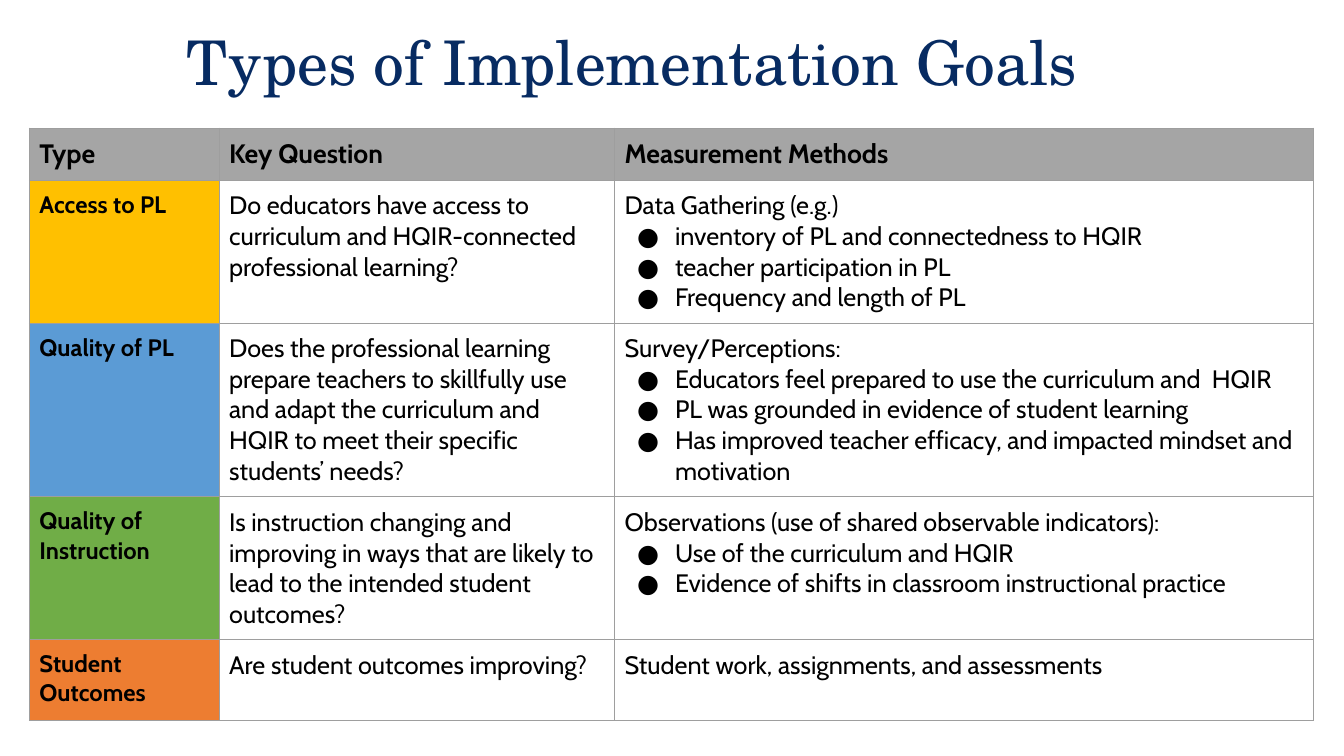
from pptx import Presentation
from pptx.dml.color import RGBColor
from pptx.enum import text
from pptx.oxml import parse_xml
from pptx.oxml.ns import nsdecls
from pptx.util import Pt

# Content: first line of a cell is plain, the others are bullets
TITLE = "Types of Implementation Goals"
HEAD = ["Type", "Key Question", "Measurement Methods"]
GOALS = [
    ("Access to PL", "FFC000",
     "Do educators have access to curriculum and HQIR-connected professional learning?",
     ["Data Gathering (e.g.)",
      "inventory of PL and connectedness to HQIR",
      "teacher participation in PL",
      "Frequency and length of PL"]),
    ("Quality of PL", "5B9BD5",
     "Does the professional learning prepare teachers to skillfully use and adapt "
     "the curriculum and HQIR to meet their specific students’ needs?",
     ["Survey/Perceptions:",
      "Educators feel prepared to use the curriculum and  HQIR",
      "PL was grounded in evidence of student learning",
      "Has improved teacher efficacy, and impacted mindset and motivation"]),
    ("Quality of Instruction", "70AD47",
     "Is instruction changing and improving in ways that are likely to lead to "
     "the intended student outcomes?",
     ["Observations (use of shared observable indicators):",
      "Use of the curriculum and HQIR",
      "Evidence of shifts in classroom instructional practice"]),
    ("Student Outcomes", "ED7D31",
     "Are student outcomes improving?",
     ["Student work, assignments, and assessments"]),
]
COLS = [135.5, 282.5, 499]
ROWS = [37.2, 102, 124.2, 102, 57.6]
INSET = Pt(7.2)
BLACK, WHITE, GREY, EDGE, NAVY = "000000", "FFFFFF", "A5A5A5", "9E9E9E", "072B62"


def color(code):
    return RGBColor.from_string(code)


def style(para, size, face, code, bold=False):
    for run in para.runs:
        font = run.font
        font.size, font.name, font.bold = Pt(size), face, bold
        font.color.rgb = color(code)


def inset(box):
    box.margin_left = box.margin_right = INSET
    box.margin_top = box.margin_bottom = INSET


def bullet(para):
    props = para._p.get_or_add_pPr()
    props.set("marL", str(Pt(36)))
    props.set("indent", str(-Pt(27)))
    for xml in (f'<a:buClr {nsdecls("a")}><a:srgbClr val="{BLACK}"/></a:buClr>',
                f'<a:buFont {nsdecls("a")} typeface="Cabin"/>',
                f'<a:buChar {nsdecls("a")} char="●"/>'):
        props.append(parse_xml(xml))


def border(cell):
    for side in "LRTB":
        cell._tc.get_or_add_tcPr().append(parse_xml(
            f'<a:ln{side} {nsdecls("a")} w="{Pt(0.75)}"><a:solidFill>'
            f'<a:srgbClr val="{EDGE}"/></a:solidFill></a:ln{side}>'))


def write(cell, lines, fill, size, bold):
    inset(cell)
    border(cell)
    cell.fill.solid()
    cell.fill.fore_color.rgb = color(fill)
    cell.text_frame.text = "\n".join(lines)
    for n, para in enumerate(cell.text_frame.paragraphs):
        style(para, size, "Cabin", BLACK, bold)
        if n:
            bullet(para)


deck = Presentation()
deck.slide_width, deck.slide_height = Pt(960), Pt(540)
slide = deck.slides.add_slide(deck.slide_layouts[6])

# Title
frame = slide.shapes.add_textbox(Pt(126), Pt(17.3), Pt(708), Pt(59)).text_frame
frame.word_wrap = True
frame.vertical_anchor = text.MSO_ANCHOR.MIDDLE
inset(frame)
frame.text = TITLE
frame.paragraphs[0].line_spacing = 0.9
style(frame.paragraphs[0], 44, "TeX Gyre Schola", NAVY)

# Table grid
table = slide.shapes.add_table(len(ROWS), len(COLS), Pt(21), Pt(91.5),
                               Pt(sum(COLS)), Pt(sum(ROWS))).table
table.horz_banding = table.first_row = False
for col, wide in zip(table.columns, COLS):
    col.width = Pt(wide)
for row, high in zip(table.rows, ROWS):
    row.height = Pt(high)

# Table text
for c, label in enumerate(HEAD):
    write(table.cell(0, c), [label], GREY, 19, True)
for r, (kind, fill, ask, ways) in enumerate(GOALS, 1):
    write(table.cell(r, 0), [kind], fill, 17, True)
    write(table.cell(r, 1), [ask], WHITE, 18, False)
    write(table.cell(r, 2), ways, WHITE, 18, False)

deck.save("out.pptx")
